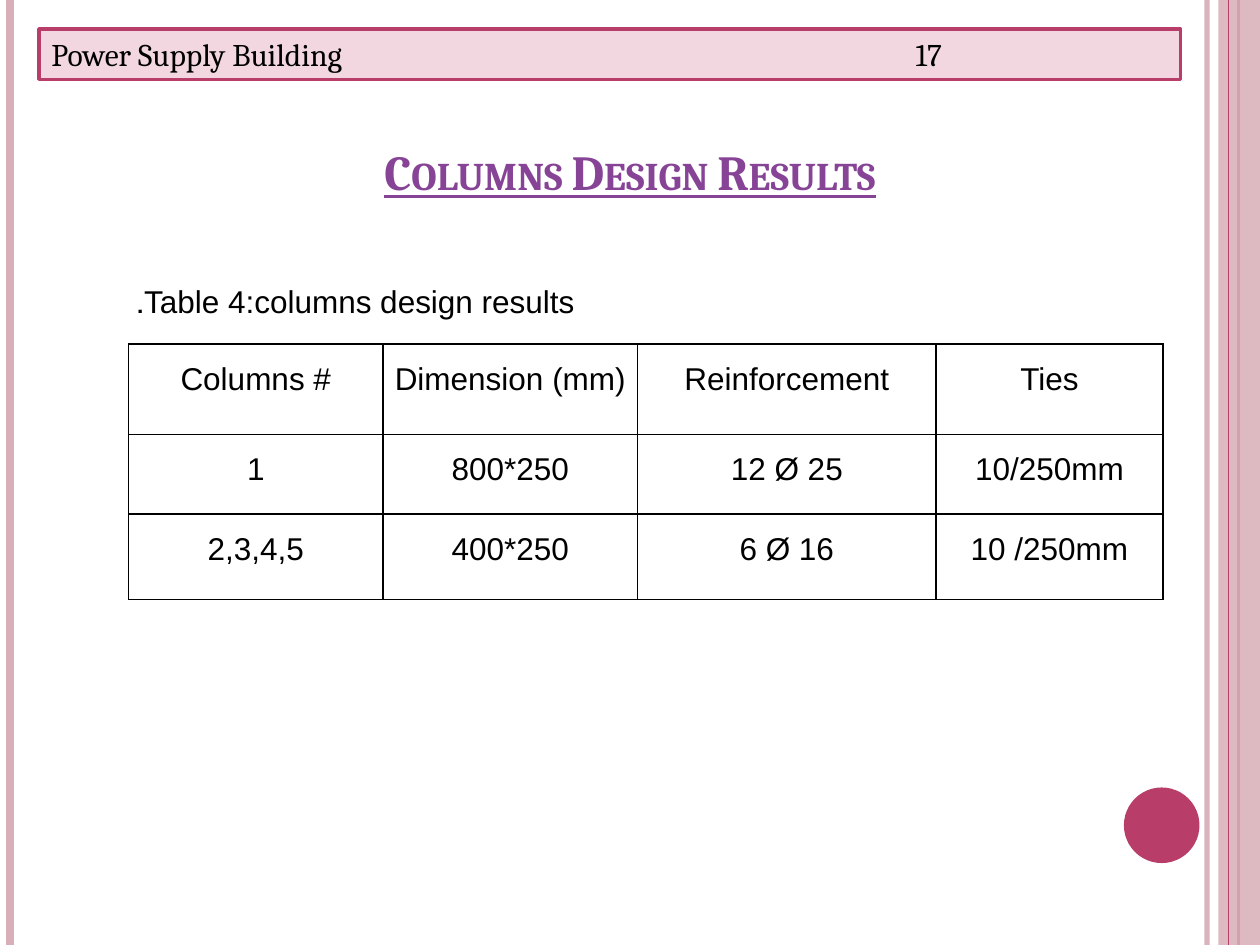
from lxml import etree
from pptx import Presentation
from pptx import util as u
from pptx.dml.color import RGBColor
from pptx.enum import shapes, text
from pptx.oxml import ns

ROSE, PINK, PALE, BLACK = "B83D68", "D8AFB9", "F2D7E0", "000000"
SERIF = {"name": "Cambria", "size": u.Pt(18)}
SANS = {"name": "Arial", "size": u.Pt(18)}


def inch(*vals):
    return [u.Inches(v) for v in vals]


def paint(target, color):
    """Give a fill, line or font a solid colour."""
    if hasattr(target, "solid"):
        target.solid()
        target = target.fore_color
    else:
        target = target.color
    target.rgb = RGBColor.from_string(color)


def put(obj, vals):
    for key, val in vals.items():
        setattr(obj, key, val)


def sub(node, tag, **attrs):
    return etree.SubElement(node, ns.qn(tag), attrs)


def fade(node, pct):
    """Set the opacity of the first solid colour in a node."""
    clr = next(node.iter(ns.qn("a:srgbClr")))
    sub(clr, "a:alpha", val=str(pct * 1000))


def write(par, words, font, color=BLACK, align=text.PP_ALIGN.CENTER):
    par.alignment = align
    run = par.add_run()
    run.text = words
    put(run.font, font)
    paint(run.font, color)
    return run


def block(slide, kind, box, color):
    shape = slide.shapes.add_shape(kind, *inch(*box))
    shape.shadow.inherit = False
    paint(shape.fill, color)
    shape.line.fill.background()
    return shape


def rule(slide, x, color, width):
    line = slide.shapes.add_connector(
        shapes.MSO_CONNECTOR.STRAIGHT, *inch(x, 0, x, 7.5))
    paint(line.line, color)
    line.line.width = u.Pt(width)
    sub(line._element.spPr, "a:effectLst")
    return line


def frame(slide):
    # Side rules, right band and page dot
    fade(rule(slide, 9.58, PINK, 3)._element.spPr, 93)
    rule(slide, 0.08, PINK, 4.5)
    rule(slide, 9.83, ROSE, 1.5)
    band = block(slide, shapes.MSO_SHAPE.RECTANGLE, (9.67, 0, 0.33, 7.5), PINK)
    fade(band._element.spPr, 87)
    rule(slide, 9.75, ROSE, 0.75)
    block(slide, shapes.MSO_SHAPE.OVAL, (8.92, 6.25, 0.6, 0.6), ROSE)


def header(slide, box, name, page):
    # Section name, with the page number on a tab stop
    bar = block(slide, shapes.MSO_SHAPE.RECTANGLE, box, PALE)
    paint(bar.line, ROSE)
    bar.line.width = u.Pt(2)
    par = bar.text_frame.paragraphs[0]
    write(par, f"{name}\t{page}", SERIF, align=text.PP_ALIGN.LEFT)
    tabs = sub(par._p.get_or_add_pPr(), "a:tabLst")
    sub(tabs, "a:tab", pos=str(u.Inches(6.86)), algn="l")


def heading(slide, box, words):
    title = slide.shapes.title
    put(title, dict(zip(("left", "top", "width", "height"), inch(*box))))
    title.text_frame.vertical_anchor = text.MSO_ANCHOR.BOTTOM
    font = {"name": "Cambria", "size": u.Pt(28), "bold": True, "underline": True}
    run = write(title.text_frame.paragraphs[0], words, font, "874396")
    run._r.get_or_add_rPr().set("cap", "small")


def caption(slide, box, words):
    # Right-to-left paragraph
    frm = slide.shapes.add_textbox(*inch(*box)).text_frame
    put(frm, {"word_wrap": False, "auto_size": text.MSO_AUTO_SIZE.SHAPE_TO_FIT_TEXT})
    par = frm.paragraphs[0]
    write(par, words, SANS, align=text.PP_ALIGN.RIGHT)
    par._p.get_or_add_pPr().set("rtl", "1")


def edge(cell):
    # Thin black border on all four sides, ahead of the fill
    props = cell._tc.get_or_add_tcPr()
    for i, side in enumerate("LRTB"):
        line = etree.Element(ns.qn(f"a:ln{side}"), w=str(u.Pt(1)))
        sub(sub(line, "a:solidFill"), "a:srgbClr", val=BLACK)
        props.insert(i, line)


def grid(slide, box, cols, rows, data):
    table = slide.shapes.add_table(len(rows), len(cols), *inch(*box)).table
    put(table, {"first_row": False, "horz_banding": False})
    for col, wide in zip(table.columns, cols):
        col.width = u.Inches(wide)
    for row, high, vals in zip(table.rows, rows, data):
        row.height = u.Inches(high)
        for cell, val in zip(row.cells, vals):
            side = u.Inches(0.07)
            put(cell, {"margin_left": side, "margin_right": side,
                       "margin_top": 0, "margin_bottom": 0})
            par = cell.text_frame.paragraphs[0]
            par.line_spacing = 1.5
            write(par, val, SANS)
            cell.fill.background()
            edge(cell)


def main():
    deck = Presentation()
    deck.slide_width, deck.slide_height = inch(10, 7.5)
    slide = deck.slides.add_slide(deck.slide_layouts[5])
    frame(slide)
    heading(slide, (0.5, 0.62, 9, 1.02), "Columns Design Results")
    grid(slide, (1.02, 2.73, 8.2, 2.03), (2.02, 2.02, 2.37, 1.8),
         (0.72, 0.63, 0.68), [
             ("Columns #", "Dimension (mm)", "Reinforcement", "Ties"),
             ("1", "800*250", "12 Ø 25", "10/250mm"),
             ("2,3,4,5", "400*250", "6 Ø 16", "10 /250mm")])
    header(slide, (0.31, 0.23, 9.06, 0.4), "Power Supply Building", 17)
    caption(slide, (0.94, 2.19, 3.72, 0.4), "Table 4:columns design results.")
    deck.save("out.pptx")


if __name__ == "__main__":
    main()
